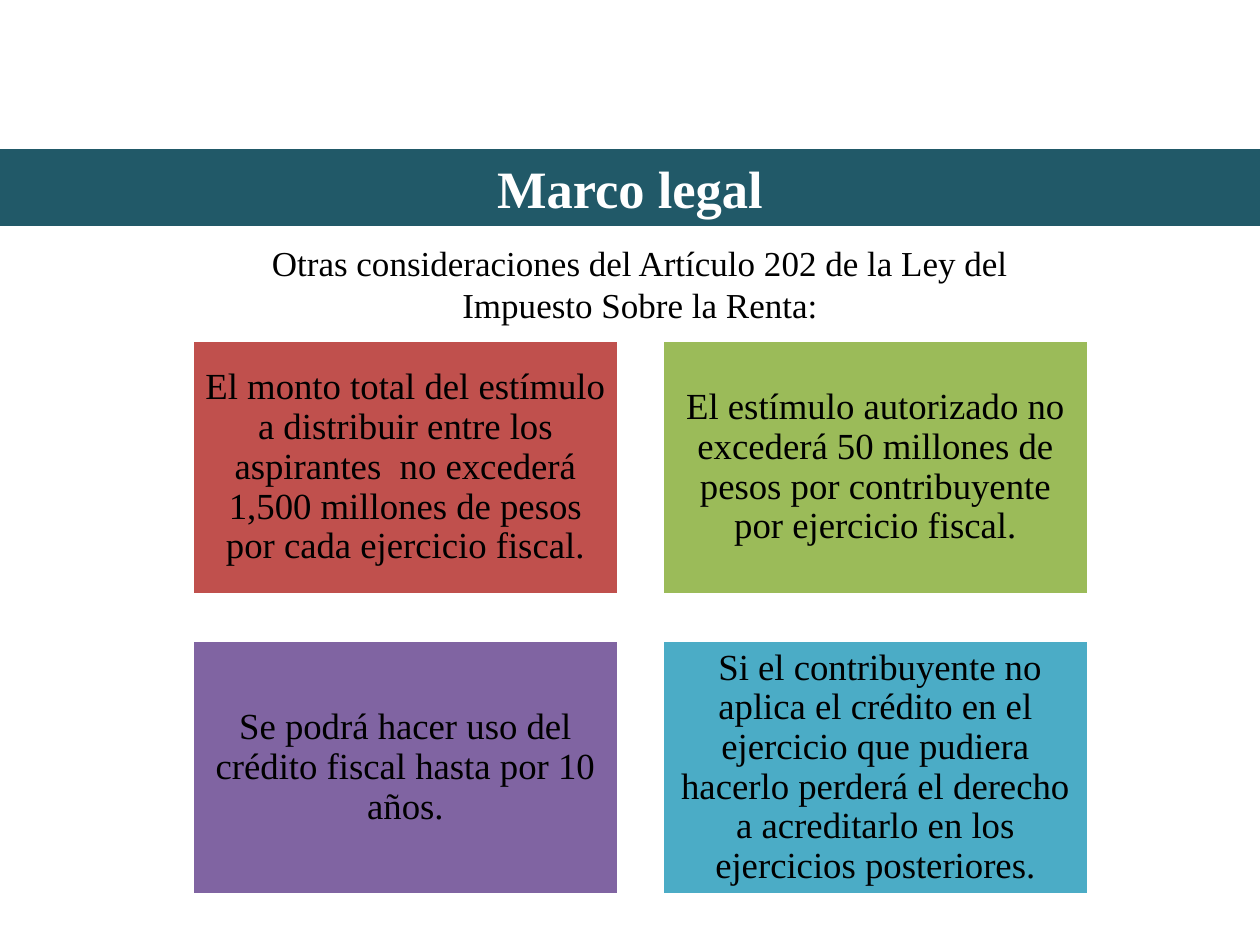
from pptx import Presentation
from pptx.dml.color import RGBColor
from pptx.enum.shapes import MSO_SHAPE
from pptx.enum.text import MSO_ANCHOR, MSO_AUTO_SIZE, PP_ALIGN
from pptx.util import Emu, Pt

RECT = MSO_SHAPE.RECTANGLE
MIDDLE = MSO_ANCHOR.MIDDLE
NO_FIT = MSO_AUTO_SIZE.NONE
CENTER = PP_ALIGN.CENTER

FONT = "Times New Roman"
COLORS = {
    "white": "FFFFFF",
    "black": "000000",
    "band": "215968",
    "red": "C0504D",
    "green": "9BBB59",
    "purple": "8064A2",
    "blue": "4BACC6",
}


def px(n):
    return Emu(n * 914400 // 126)


def set_text(sp, text, size, color, bold=False):
    tf = sp.text_frame
    tf.word_wrap = True
    tf.auto_size = NO_FIT
    tf.text = text
    p = tf.paragraphs[0]
    p.alignment = CENTER
    r = p.runs[0]
    r.font.name = FONT
    r.font.size = Pt(size)
    r.font.bold = bold
    r.font.color.rgb = RGBColor.from_string(COLORS[color])
    return tf


prs = Presentation()
prs.slide_width, prs.slide_height = px(1260), px(945)
s = prs.slides.add_slide(prs.slide_layouts[5])

# Title band
title = s.shapes.title
title.left, title.top, title.width, title.height = px(0), px(149), px(1260), px(77)
title.fill.solid()
title.fill.fore_color.rgb = RGBColor.from_string(COLORS["band"])
tf = set_text(title, "Marco legal", 30, "white", bold=True)
tf.vertical_anchor = MIDDLE

# Introduction
intro = s.shapes.add_textbox(px(222), px(235), px(836), px(97))
set_text(
    intro,
    "Otras consideraciones del Artículo 202 de la Ley del Impuesto Sobre la Renta:",
    20, "black",
)

# Two-by-two grid of considerations
LEFT, TOP, WIDTH, HEIGHT, GAP = 192, 340, 427, 255, 43
ROW_GAP = 45
boxes = [
    ("red", "El monto total del estímulo a distribuir entre los aspirantes  no "
            "excederá 1,500 millones de pesos por cada ejercicio fiscal."),
    ("green", "El estímulo autorizado no excederá 50 millones de pesos por "
              "contribuyente por ejercicio fiscal."),
    ("purple", "Se podrá hacer uso del crédito fiscal hasta por 10 años."),
    ("blue", " Si el contribuyente no aplica el crédito en el ejercicio que pudiera "
             "hacerlo perderá el derecho a acreditarlo en los ejercicios posteriores."),
]
for i, (color, text) in enumerate(boxes):
    row, col = divmod(i, 2)
    sp = s.shapes.add_shape(
        RECT,
        px(LEFT + col * (WIDTH + GAP)), px(TOP + row * (HEIGHT + ROW_GAP)),
        px(WIDTH), px(HEIGHT),
    )
    sp.shadow.inherit = False
    sp.fill.solid()
    sp.fill.fore_color.rgb = RGBColor.from_string(COLORS[color])
    sp.line.color.rgb = RGBColor.from_string(COLORS["white"])
    sp.line.width = Pt(2)
    tf = set_text(sp, text, 21, "black")
    tf.vertical_anchor = MIDDLE
    tf.margin_left = tf.margin_right = tf.margin_top = tf.margin_bottom = px(11)
    tf.paragraphs[0].line_spacing = 0.9

prs.save("out.pptx")
